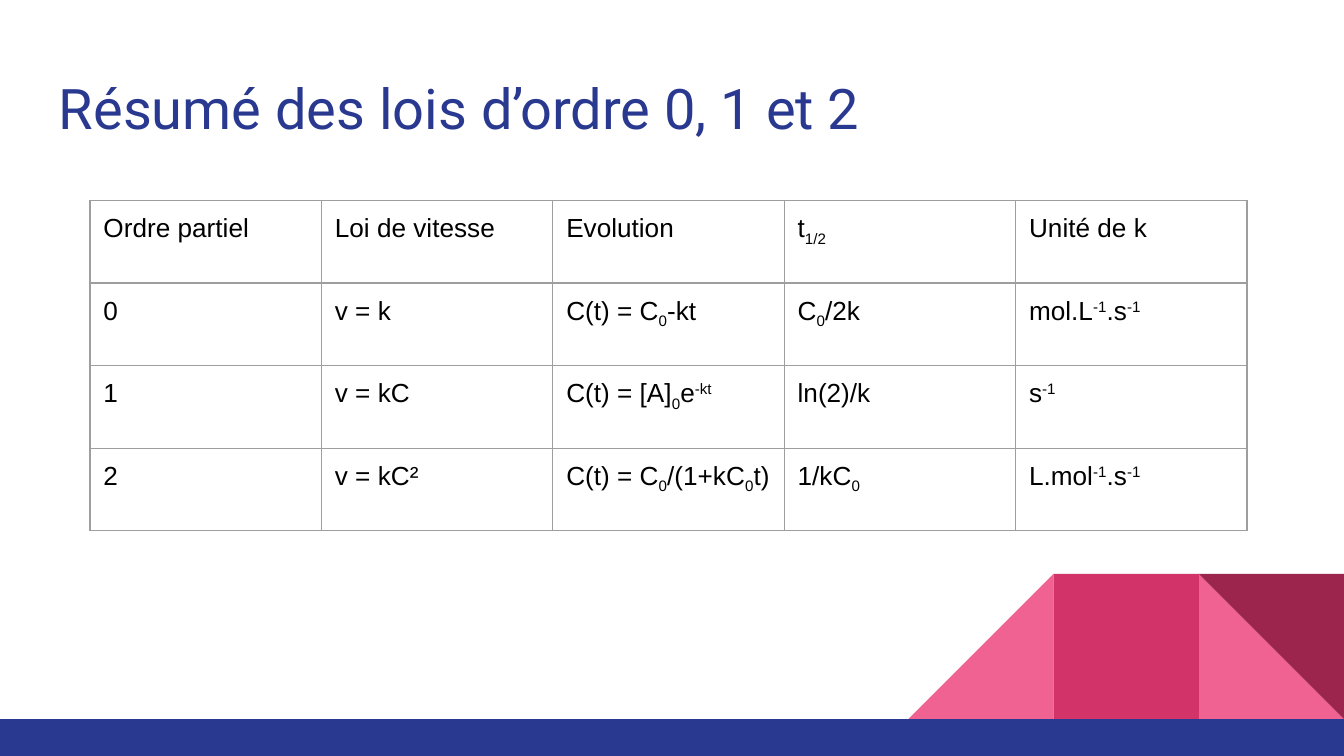
import pptx
import pptx.util
import pptx.dml.color
import pptx.enum.shapes
import pptx.enum.text
import pptx.oxml.ns
from lxml import etree

Inches, Pt = pptx.util.Inches, pptx.util.Pt
SHAPE = pptx.enum.shapes.MSO_SHAPE

# Content: "|" separates runs, "_" starts a subscript, "^" a superscript
TITLE = "Résumé des lois d’ordre 0, 1 et 2"
ROWS = [
    ["Ordre partiel", "Loi de vitesse", "Evolution", "t|_1/2", "Unité de k"],
    ["0", "v = k", "C(t) = C|_0|-kt", "C|_0|/2k", "mol.L|^-1|.s|^-1"],
    ["1", "v = kC", "C(t) = [A]|_0|e|^-kt", "ln(2)/k", "s|^-1"],
    ["2", "v = kC²", "C(t) = C|_0|/(1+kC|_0|t)", "1/kC|_0", "L.mol|^-1|.s|^-1"],
]
BASELINES = {"_": "-25000", "^": "30000"}
COLORS = {"blue": "2A3990", "pink": "F06292", "rose": "D23369",
          "wine": "9C254D", "border": "9E9E9E", "text": "000000"}

# Layout, in inches, on a 16:9 slide
WIDTH = 10
HEIGHT = WIDTH * 9 / 16
BAND_TOP = 5.35
TILE = 1.08
TABLE_LEFT, TABLE_TOP = 0.67, 1.49
TABLE_WIDTH, TABLE_HEIGHT = 8.61, 2.46
# Decoration: preset, tiles from the right edge, colour, rotation, mirrored
TILES = [
    (SHAPE.RIGHT_TRIANGLE, 1, "pink", 0, False),
    (SHAPE.RIGHT_TRIANGLE, 3, "pink", 0, True),
    (SHAPE.RECTANGLE, 2, "rose", 0, False),
    (SHAPE.RIGHT_TRIANGLE, 1, "wine", 180, False),
]


def color(name):
    return pptx.dml.color.RGBColor.from_string(COLORS[name])


def style(paragraph, font_name, size, color_name):
    paragraph.font.name = font_name
    paragraph.font.size = Pt(size)
    paragraph.font.color.rgb = color(color_name)


def add_block(slide, preset, left, top, width, height, color_name):
    shape = slide.shapes.add_shape(
        preset, Inches(left), Inches(top), Inches(width), Inches(height))
    shape.shadow.inherit = False
    shape.fill.solid()
    shape.fill.fore_color.rgb = color(color_name)
    shape.line.fill.background()
    return shape


def add_borders(cell):
    properties = cell._tc.get_or_add_tcPr()
    for index, side in enumerate(("lnL", "lnR", "lnT", "lnB")):
        line = etree.Element(pptx.oxml.ns.qn(f"a:{side}"), w=str(Pt(0.75)))
        fill = etree.SubElement(line, pptx.oxml.ns.qn("a:solidFill"))
        etree.SubElement(fill, pptx.oxml.ns.qn("a:srgbClr"), val=COLORS["border"])
        properties.insert(index, line)


def fill_cell(cell, text):
    cell.margin_left = cell.margin_right = Inches(0.1)
    cell.margin_top = cell.margin_bottom = Inches(0.1)
    paragraph = cell.text_frame.paragraphs[0]
    style(paragraph, "Arial", 14, "text")
    for part in text.split("|"):
        run = paragraph.add_run()
        baseline = BASELINES.get(part[0])
        run.text = part[1:] if baseline else part
        if baseline:
            run._r.get_or_add_rPr().set("baseline", baseline)
    cell.fill.background()
    add_borders(cell)


def main():
    presentation = pptx.Presentation()
    presentation.slide_width = Inches(WIDTH)
    presentation.slide_height = Inches(HEIGHT)
    slide = presentation.slides.add_slide(presentation.slide_layouts[6])

    # Corner decoration and bottom band
    for preset, steps, color_name, rotation, mirrored in TILES:
        tile = add_block(slide, preset, WIDTH - steps * TILE, BAND_TOP - TILE,
                         TILE, TILE, color_name)
        tile.rotation = rotation
        if mirrored:
            tile._element.spPr.xfrm.set("flipH", "1")
    add_block(slide, SHAPE.RECTANGLE, 0, BAND_TOP, WIDTH, HEIGHT - BAND_TOP, "blue")

    # Title
    title = slide.shapes.add_textbox(
        Inches(0.34), Inches(0.45), Inches(9.32), Inches(0.66))
    frame = title.text_frame
    frame.word_wrap = True
    frame.vertical_anchor = pptx.enum.text.MSO_ANCHOR.TOP
    frame.margin_left = frame.margin_right = Inches(0.1)
    frame.margin_top = frame.margin_bottom = Inches(0.1)
    frame.text = TITLE
    style(frame.paragraphs[0], "Roboto", 30, "blue")

    # Table of rate laws
    table = slide.shapes.add_table(
        len(ROWS), len(ROWS[0]), Inches(TABLE_LEFT), Inches(TABLE_TOP),
        Inches(TABLE_WIDTH), Inches(TABLE_HEIGHT)).table
    table.first_row = table.horz_banding = False
    for row_index, row in enumerate(ROWS):
        for column_index, text in enumerate(row):
            fill_cell(table.cell(row_index, column_index), text)

    presentation.save("out.pptx")


if __name__ == "__main__":
    main()
